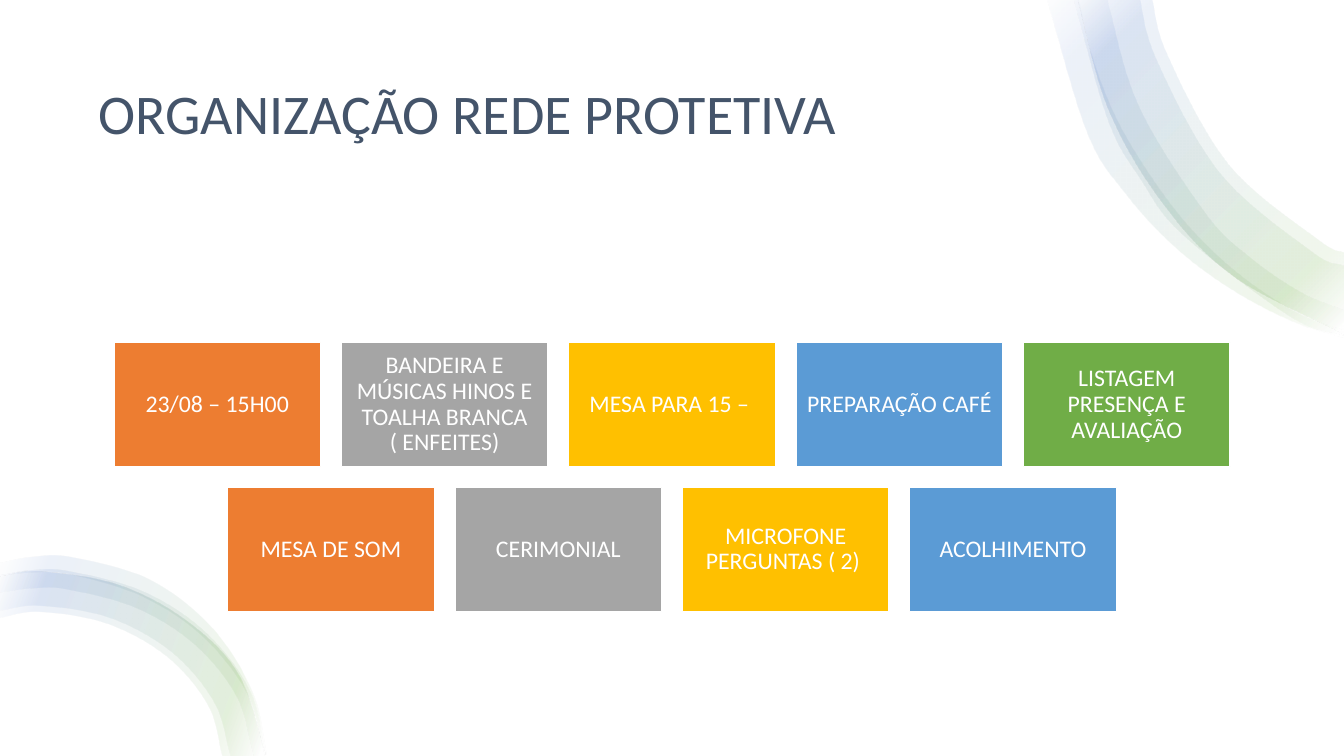
from pptx import Presentation
from pptx import util as u
from pptx.dml.color import RGBColor
from pptx.enum import shapes, text
from pptx.oxml import parse_xml
from pptx.oxml.ns import nsdecls, qn

WIDTH, HEIGHT = 13.33, 7.5
FONT = "Calibri"
TITLE = "ORGANIZAÇÃO REDE PROTETIVA"
TASK_ROWS = [
    ["23/08 – 15H00", "BANDEIRA E MÚSICAS HINOS E TOALHA BRANCA ( ENFEITES)",
     "MESA PARA 15 – ", "PREPARAÇÃO CAFÉ", "LISTAGEM PRESENÇA E AVALIAÇÃO"],
    ["MESA DE SOM", "CERIMONIAL", "MICROFONE PERGUNTAS ( 2) ", "ACOLHIMENTO"],
]
TILE_COLORS = ["ED7D31", "A5A5A5", "FFC000", "5B9BD5", "70AD47"]
TILE_W, TILE_H, TILES_TOP = 2.05, 1.23, 3.4
GAP = TILE_W / 10

# Each ribbon is an outer edge and an inner edge, given as points along a curve.
TOP_OUTER = [(10.67, -0.09), (10.99, 1.07), (11.52, 2), (12.23, 2.74), (13.33, 3.32)]
TOP_RIBBONS = [
    ([(10.36, -0.09), (10.78, 1.31), (11.16, 1.92), (11.65, 2.45),
      (12.21, 2.87), (12.82, 3.19), (13.33, 3.35)],
     [(10.68, -0.09), (10.82, 0.52), (11.06, 1.15), (11.4, 1.73), (11.81, 2.27),
      (12.3, 2.73), (12.86, 3.1), (13.33, 3.28)]),
    (TOP_OUTER,
     [(11.41, -0.09), (11.58, 0.55), (12.19, 1.64), (13.07, 2.38), (13.33, 2.51)]),
    ([(10.63, -0.09), (10.99, 1.19), (11.32, 1.79), (11.73, 2.33),
      (12.79, 3.14), (13.33, 3.33)],
     [(10.96, -0.09), (11.29, 1.04), (11.95, 2.11), (12.39, 2.55),
      (12.9, 2.9), (13.33, 3.08)]),
    (TOP_OUTER,
     [(11.29, -0.09), (11.47, 0.59), (12.1, 1.72), (13.01, 2.5), (13.33, 2.64)]),
]
BOTTOM_OUTER = [(0, 5.72), (0.4, 5.67), (1.17, 5.8), (1.85, 6.16), (2.36, 6.69), (2.63, 7.5)]
BOTTOM_RIBBONS = [
    (BOTTOM_OUTER,
     [(0, 6.13), (0.4, 6.07), (1.07, 6.19), (1.66, 6.52), (2.06, 7), (2.2, 7.5)]),
    (BOTTOM_OUTER,
     [(0, 6.06), (0.4, 6.01), (1.09, 6.13), (1.7, 6.47), (2.12, 6.97), (2.28, 7.5)]),
    ([(0, 5.71), (0.31, 5.66), (0.69, 5.67), (1.42, 5.87), (2.03, 6.27),
      (2.47, 6.85), (2.63, 7.5)],
     [(0, 5.88), (0.33, 5.84), (0.67, 5.85), (1.34, 6.03), (1.92, 6.39),
      (2.34, 6.91), (2.51, 7.5)]),
    ([(0, 5.59), (0.31, 5.53), (0.71, 5.53), (1.48, 5.75), (2.1, 6.23),
      (2.5, 6.87), (2.64, 7.5)],
     [(0, 5.72), (0.32, 5.68), (0.69, 5.7), (1.39, 5.91), (2, 6.31),
      (2.45, 6.89), (2.62, 7.5)]),
]
RIBBON_GROUPS = [(TOP_RIBBONS, 225), (BOTTOM_RIBBONS, 200)]
RIBBON_STOPS = [(2, "FFFFFF"), (16, "70AD47"), (85, "4472C4"), (100, "FFFFFF")]
RIBBON_OPACITY = 10


def color(value):
    return RGBColor.from_string(value)


def extend(start, following):
    """Mirror the following point about the start of a curve."""
    return tuple(2 * s - f for s, f in zip(start, following))


def curve_edge(lines, points):
    """Turn the line elements that join the points into smooth Bezier curves."""
    padded = [extend(*points[:2]), *points, extend(*points[:-3:-1])]
    for line, a, b, c, d in zip(lines, padded, padded[1:], padded[2:], padded[3:]):
        leaving = [q + (r - p) / 6 for p, q, r in zip(a, b, c)]
        arriving = [r - (s - q) / 6 for q, r, s in zip(b, c, d)]
        stations = "".join(f'<a:pt x="{round(x)}" y="{round(y)}"/>'
                           for x, y in (leaving, arriving, c))
        line.getparent().replace(line, parse_xml(
            f'<a:cubicBezTo {nsdecls("a")}>{stations}</a:cubicBezTo>'))


def add_ribbon(slide, outer, inner, angle):
    outline = [(u.Inches(x), u.Inches(y)) for x, y in outer + inner[::-1]]
    builder = slide.shapes.build_freeform(*outline[0])
    builder.add_line_segments(outline[1:], close=True)
    ribbon = builder.convert_to_shape()
    local = [(x - ribbon.left, y - ribbon.top) for x, y in outline]
    lines = list(ribbon._element.iter(qn("a:lnTo")))
    split = len(outer)
    curve_edge(lines[:split - 1], local[:split])
    curve_edge(lines[split:], local[split:])

    ribbon.shadow.inherit = False
    ribbon.line.fill.background()
    ribbon.fill.gradient()
    gradient = ribbon._element.spPr.find(qn("a:gradFill"))
    stops = "".join(
        f'<a:gs pos="{place * 1000}"><a:srgbClr val="{value}">'
        f'<a:alpha val="{RIBBON_OPACITY * 1000}"/></a:srgbClr></a:gs>'
        for place, value in RIBBON_STOPS)
    gradient.getparent().replace(gradient, parse_xml(
        f'<a:gradFill {nsdecls("a")} rotWithShape="1"><a:gsLst>{stops}</a:gsLst>'
        f'<a:lin ang="{angle * 60000}" scaled="0"/></a:gradFill>'))


def add_rectangle(slide, fill, left, top, width, height):
    rectangle = slide.shapes.add_shape(
        shapes.MSO_SHAPE.RECTANGLE, *map(u.Inches, (left, top, width, height)))
    rectangle.shadow.inherit = False
    rectangle.fill.solid()
    rectangle.fill.fore_color.rgb = color(fill)
    rectangle.line.fill.background()
    return rectangle


def write(shape, wording, size, font_color, align):
    frame = shape.text_frame
    frame.text = wording
    frame.word_wrap = True
    frame.vertical_anchor = text.MSO_ANCHOR.MIDDLE
    paragraph = frame.paragraphs[0]
    paragraph.alignment = align
    paragraph.line_spacing = 0.9
    font = paragraph.runs[0].font
    font.name, font.size = FONT, u.Pt(size)
    font.color.rgb = color(font_color)


def add_tile(slide, wording, fill, left, top):
    tile = add_rectangle(slide, fill, left, top, TILE_W, TILE_H)
    tile.line.color.rgb = color("FFFFFF")
    tile.line.width = u.Pt(1)
    frame = tile.text_frame
    frame.margin_left = frame.margin_right = u.Inches(0.07)
    frame.margin_top = frame.margin_bottom = u.Inches(0.07)
    write(tile, wording, 17, "FFFFFF", text.PP_ALIGN.CENTER)


def main():
    deck = Presentation()
    deck.slide_width, deck.slide_height = u.Inches(WIDTH), u.Inches(HEIGHT)
    slide = deck.slides.add_slide(deck.slide_layouts[6])
    add_rectangle(slide, "FFFFFF", 0, 0, WIDTH, HEIGHT)

    title = slide.shapes.add_textbox(*map(u.Inches, (0.88, 0.5, 11.57, 1.3)))
    write(title, TITLE, 40, "44546A", text.PP_ALIGN.LEFT)

    for ribbons, angle in RIBBON_GROUPS:
        for outer, inner in ribbons:
            add_ribbon(slide, outer, inner, angle)

    for row, tasks in enumerate(TASK_ROWS):
        row_width = len(tasks) * (TILE_W + GAP) - GAP
        row_left = (WIDTH - row_width) / 2
        for column, (task, fill) in enumerate(zip(tasks, TILE_COLORS)):
            add_tile(slide, task, fill, row_left + column * (TILE_W + GAP),
                     TILES_TOP + row * (TILE_H + GAP))

    deck.save("out.pptx")


if __name__ == "__main__":
    main()
